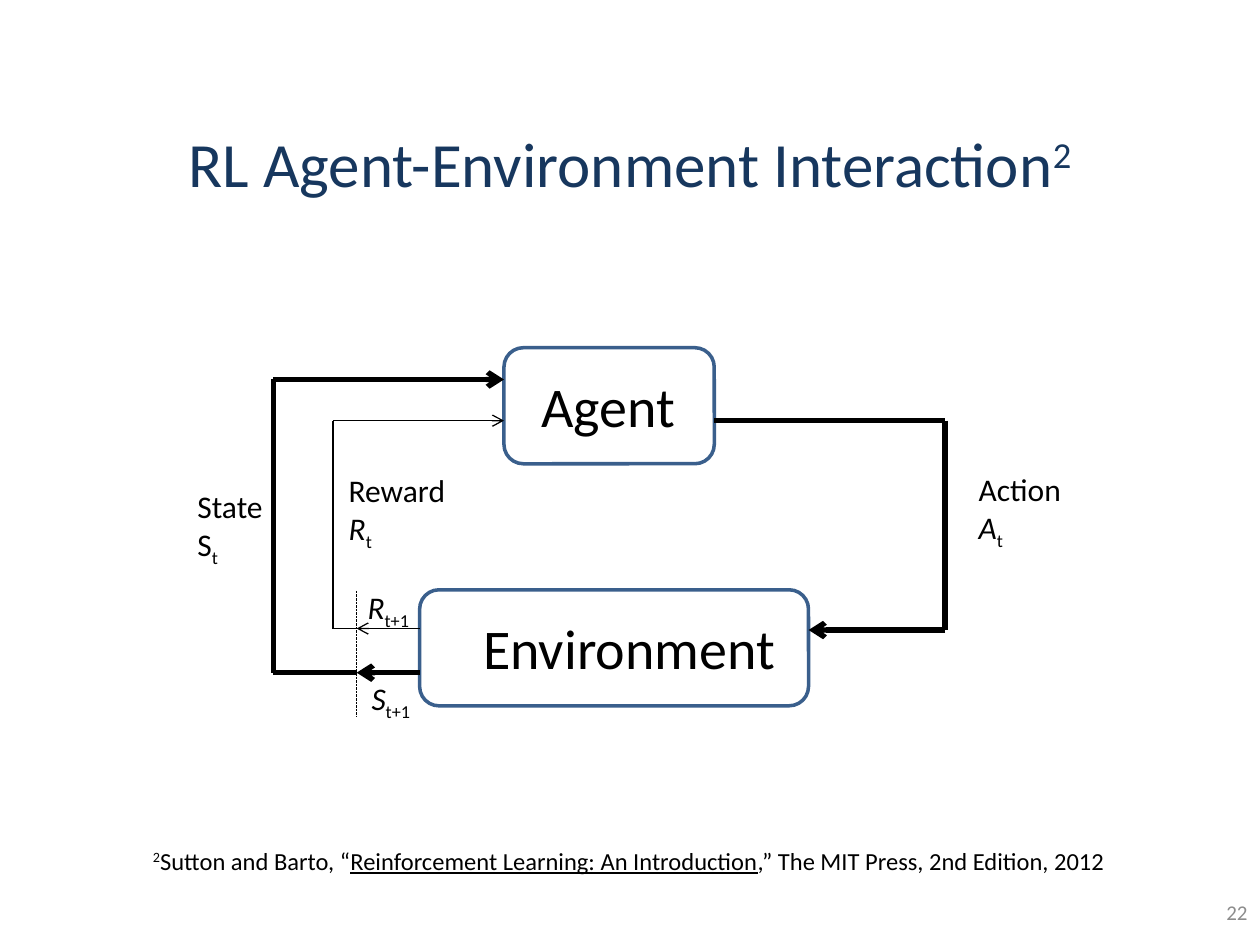
from lxml import etree
from pptx import Presentation
from pptx.dml.color import RGBColor
from pptx.enum.dml import MSO_LINE
from pptx.enum.shapes import MSO_CONNECTOR, MSO_SHAPE
from pptx.enum.text import MSO_ANCHOR, PP_ALIGN
from pptx.oxml.ns import qn
from pptx.util import Cm, Pt

NAVY = RGBColor(0x17, 0x37, 0x5E)
BLUE = RGBColor(0x3A, 0x5F, 0x8C)
GREY = RGBColor(0x8C, 0x8C, 0x8C)
BLACK = RGBColor(0, 0, 0)
LEFT, CENTER, RIGHT = PP_ALIGN.LEFT, PP_ALIGN.CENTER, PP_ALIGN.RIGHT
TOP, MIDDLE = MSO_ANCHOR.TOP, MSO_ANCHOR.MIDDLE
STRAIGHT = MSO_CONNECTOR.STRAIGHT
ROUNDED = MSO_SHAPE.ROUNDED_RECTANGLE
DASH = MSO_LINE.SQUARE_DOT
FONT = "Calibri"
SUPER, SUB = 30, -25
THICK, THIN = 3, 0.75


def put_text(slide, box, paras, size, color=BLACK, align=LEFT, anchor=TOP,
             space=None):
    """Each paragraph is a list of (text, style) runs; style may hold
    base (percent), italic and underline."""
    frame = slide.shapes.add_textbox(*map(Cm, box)).text_frame
    frame.word_wrap = True
    frame.vertical_anchor = anchor
    for i, runs in enumerate(paras):
        para = frame.add_paragraph() if i else frame.paragraphs[0]
        para.alignment = align
        if space:
            para.line_spacing = space
        font = para.font
        font.name, font.size = FONT, Pt(size)
        font.color.rgb = color
        for text, style in runs:
            run = para.add_run()
            run.text = text
            if "italic" in style:
                run.font.italic = True
            if "underline" in style:
                run.font.underline = True
            if "base" in style:
                run.font._element.set("baseline", str(style["base"] * 1000))


def put_line(slide, start, end, width, arrow=False, dash=None):
    link = slide.shapes.add_connector(STRAIGHT, *map(Cm, start + end))
    link.line.color.rgb = BLACK
    link.line.width = Pt(width)
    if dash:
        link.line.dash_style = dash
    if arrow:
        tail = etree.SubElement(link.line._get_or_add_ln(), qn("a:tailEnd"))
        tail.set("type", "arrow")
    etree.SubElement(link._element.spPr, qn("a:effectLst"))


def put_path(slide, points, width, arrow=False):
    """Join the points by straight lines, with any arrowhead on the last."""
    last = len(points) - 2
    for i, (start, end) in enumerate(zip(points, points[1:])):
        put_line(slide, start, end, width, arrow and i == last)


def put_node(slide, box, name, label):
    node = slide.shapes.add_shape(ROUNDED, *map(Cm, box))
    node.shadow.inherit = False
    node.fill.background()
    node.line.color.rgb = BLUE
    node.line.width = Pt(2)
    put_text(slide, label, [[(name, {})]], 32, align=CENTER)


def symbol(letter, index, **style):
    return [(letter, style), (index, {"base": SUB})]


def put_loop(slide, left, top):
    def at(x, y, *size):
        return (left + x, top + y) + size

    agent, env = 6.43, 4.73
    agent_end, env_end = 10.67, 12.57
    state, reward, action, step = 1.78, 2.98, 15.32, 3.46
    state_in, port = 0.64, 1.47
    reward_out, action_in, state_out = 5.66, 5.69, 6.55

    put_node(slide, at(agent, 0, agent_end - agent, 2.34), "Agent",
             at(6.73, 0.36, 3.61, 1.63))
    put_node(slide, at(env, 4.88, env_end - env, 2.34), "Environment",
             at(5.36, 5.23, 7.19, 1.63))

    for rail, out, into, width in ((state, state_out, state_in, THICK),
                                   (reward, reward_out, port, THIN)):
        put_path(slide, [at(step, out), at(rail, out), at(rail, into),
                         at(agent, into)], width, True)
        put_line(slide, at(env, out), at(step, out), width, True)
    put_path(slide, [at(agent_end, port), at(action, port),
                     at(action, action_in), at(env_end, action_in)],
             THICK, True)
    put_line(slide, at(step, 4.9), at(step, 7.44), 0.5, dash=DASH)

    labels = (
        ((15.75, 2.34, 2.34, 1.8),
         [[("Action", {})], symbol("A", "t", italic=True)]),
        ((3.05, 2.36, 2.97, 1.8),
         [[("Reward ", {})] + symbol("R", "t", italic=True)]),
        ((0, 2.69, 2.97, 1.8), [[("State", {})], symbol("S", "t")]),
        ((3.43, 4.72, 1.65, 1.02), [symbol("R", "t+1", italic=True)]),
        ((3.51, 6.55, 1.65, 1.02), [symbol("S", "t+1", italic=True)]),
    )
    for box, paras in labels:
        put_text(slide, at(*box), paras, 18)


def put_title(slide, box):
    runs = [("RL Agent-Environment Interaction", {}), ("2", {"base": SUPER})]
    put_text(slide, box, [runs], 36, NAVY, CENTER, MIDDLE)


def put_source(slide, box):
    runs = [("2", {"base": SUPER}), ("Sutton and Barto, “", {}),
            ("Reinforcement Learning: An Introduction", {"underline": True}),
            (",” The MIT Press, 2nd Edition, 2012", {})]
    put_text(slide, box, [runs], 14, align=CENTER, space=0.8)


def put_number(slide, box):
    put_text(slide, box, [[("22", {})]], 12, GREY, RIGHT, MIDDLE)


def main():
    deck = Presentation()
    deck.slide_width, deck.slide_height = Cm(25.4), Cm(19.05)
    slide = deck.slides.add_slide(deck.slide_layouts[6])
    put_title(slide, (1.27, 2.1, 22.86, 2.34))
    put_number(slide, (19.48, 17.73, 5.92, 1.32))
    put_loop(slide, 3.73, 7.01)
    put_source(slide, (1.88, 17.04, 21.59, 0.74))
    deck.save("out.pptx")


if __name__ == "__main__":
    main()
